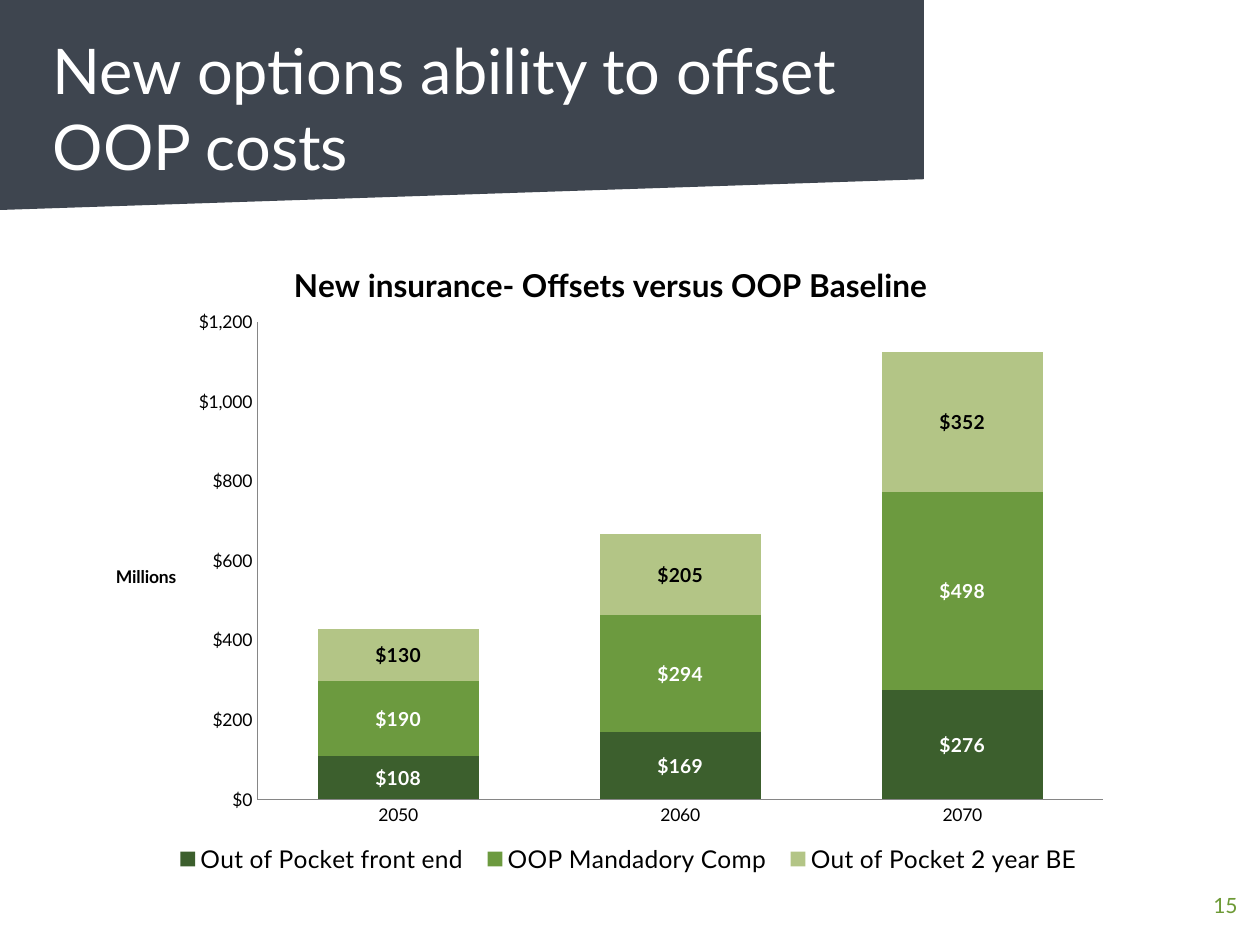
import dataclasses

import pptx
import pptx.chart.data
import pptx.dml.color
import pptx.enum.chart
import pptx.enum.shapes
import pptx.enum.text
import pptx.oxml
import pptx.oxml.ns
import pptx.util

Pt = pptx.util.Pt
qn = pptx.oxml.ns.qn


@dataclasses.dataclass(frozen=True)
class Theme:
    font: str = "Lato"
    banner: str = "3E454F"
    white: str = "FFFFFF"
    black: str = "000000"
    axis: str = "868686"
    accent: str = "6D9A35"
    title_size: int = 36
    chart_title_size: int = 18
    legend_size: int = 14
    number_size: int = 12
    label_size: int = 11
    axis_size: int = 10


THEME = Theme()
CATEGORIES = ["2050", "2060", "2070"]
SERIES = [
    ("Out of Pocket front end", (108, 169, 276), "3C5F2D", THEME.white),
    ("OOP Mandadory Comp", (190, 294, 498), "6C9A3F", THEME.white),
    ("Out of Pocket 2 year BE", (130, 205, 352), "B3C586", THEME.black),
]


def rgb(color):
    return pptx.dml.color.RGBColor.from_string(color)


def set_font(font, size, color=THEME.black, bold=False):
    font.name = THEME.font
    font.size = Pt(size)
    font.bold = bold
    font.color.rgb = rgb(color)


def write_text(text_frame, text, *, size, color=THEME.black, bold=False, align=None):
    for index, line in enumerate(text.split("\n")):
        paragraph = text_frame.paragraphs[0] if index == 0 else text_frame.add_paragraph()
        paragraph.alignment = align
        run = paragraph.add_run()
        run.text = line
        set_font(run.font, size, color, bold)


def add_block(slide, kind, left, top, width, height, color, rotation=0):
    shape = slide.shapes.add_shape(kind, Pt(left), Pt(top), Pt(width), Pt(height))
    shape.rotation = rotation
    shape.shadow.inherit = False
    shape.fill.solid()
    shape.fill.fore_color.rgb = rgb(color)
    shape.line.fill.background()


def add_title(slide, text):
    title = slide.shapes.title
    title.left, title.top, title.width, title.height = Pt(23), Pt(14.4), Pt(522.7), Pt(105.8)
    frame = title.text_frame
    frame.word_wrap = True
    frame.auto_size = pptx.enum.text.MSO_AUTO_SIZE.NONE
    frame.vertical_anchor = pptx.enum.text.MSO_ANCHOR.TOP
    write_text(frame, text, size=THEME.title_size, color=THEME.white,
               align=pptx.enum.text.PP_ALIGN.LEFT)
    slide.shapes._spTree.append(title._element)


def add_page_number(slide, text):
    box = slide.shapes.add_textbox(Pt(686.2), Pt(506.2), Pt(39.6), Pt(39.6))
    box.text_frame.word_wrap = True
    write_text(box.text_frame, text, size=THEME.number_size, color=THEME.accent)


def set_layout(element, index, inner=False, **fractions):
    for existing in element.findall(qn("c:layout")):
        element.remove(existing)
    values = [("layoutTarget", "inner")] if inner else []
    values += [(f"{name}Mode", "edge") for name in ("x", "y")]
    values += fractions.items()
    children = "".join(f'<c:{name} val="{value}"/>' for name, value in values)
    element.insert(index, pptx.oxml.parse_xml(
        f'<c:layout {pptx.oxml.ns.nsdecls("c")}>'
        f"<c:manualLayout>{children}</c:manualLayout></c:layout>"))


def format_axis(axis):
    axis.has_major_gridlines = False
    axis.major_tick_mark = pptx.enum.chart.XL_TICK_MARK.NONE
    axis.minor_tick_mark = pptx.enum.chart.XL_TICK_MARK.NONE
    axis.format.line.color.rgb = rgb(THEME.axis)
    axis.format.line.width = Pt(0.75)
    set_font(axis.tick_labels.font, THEME.axis_size)


def format_value_axis(axis):
    format_axis(axis)
    axis.minimum_scale, axis.maximum_scale, axis.major_unit = 0, 1200, 200
    axis.tick_labels.number_format = '"$"#,##0;[Red]"$"#,##0'
    axis.tick_labels.number_format_is_linked = False
    frame = axis.axis_title.text_frame
    write_text(frame, "Millions", size=THEME.axis_size, bold=True)
    body = frame._element.find(qn("a:bodyPr"))
    body.set("rot", "0")
    body.set("vert", "horz")
    set_layout(axis.axis_title._element, 1, x=0.02, y=0.51)


def format_series(series, color, label_color):
    series.format.fill.solid()
    series.format.fill.fore_color.rgb = rgb(color)
    labels = series.data_labels
    labels.show_value = True
    labels.number_format = '"$"#,##0'
    labels.number_format_is_linked = False
    labels.position = pptx.enum.chart.XL_LABEL_POSITION.CENTER
    set_font(labels.font, THEME.label_size, label_color, bold=True)


def add_cost_chart(slide):
    data = pptx.chart.data.CategoryChartData()
    data.categories = CATEGORIES
    for name, values, _, _ in SERIES:
        data.add_series(name, values)
    chart = slide.shapes.add_chart(
        pptx.enum.chart.XL_CHART_TYPE.COLUMN_STACKED,
        Pt(52.6), Pt(127.4), Pt(589.7), Pt(378.7), data).chart
    set_font(chart.font, THEME.axis_size)

    chart.has_title = True
    write_text(chart.chart_title.text_frame, "New insurance- Offsets versus OOP Baseline",
               size=THEME.chart_title_size, bold=True)
    set_layout(chart.chart_title._element, 1, x=0.19, y=0.05)

    chart.has_legend = True
    chart.legend.position = pptx.enum.chart.XL_LEGEND_POSITION.BOTTOM
    chart.legend.include_in_layout = False
    set_font(chart.legend.font, THEME.legend_size)
    set_layout(chart.legend._element, 1, x=0.07, y=0.93, w=0.9, h=0.06)

    format_axis(chart.category_axis)
    format_value_axis(chart.value_axis)
    plot = chart.plots[0]
    plot.gap_width, plot.overlap, plot.vary_by_categories = 75, 100, False
    for series, (_, _, color, label_color) in zip(plot.series, SERIES):
        format_series(series, color, label_color)
    plot_area = chart._chartSpace.chart.plotArea
    set_layout(plot_area, 0, inner=True, x=0.16, y=0.15, w=0.82, h=0.72)


def main():
    presentation = pptx.Presentation()
    presentation.slide_width, presentation.slide_height = Pt(720), Pt(540)
    slide = presentation.slides.add_slide(presentation.slide_layouts[5])
    shapes = pptx.enum.shapes.MSO_SHAPE
    add_block(slide, shapes.FLOWCHART_MANUAL_INPUT, 0, 0, 720, 120, THEME.banner, rotation=180)
    add_block(slide, shapes.RECTANGLE, 528, 0, 192, 108, THEME.white)
    add_page_number(slide, "15")
    add_cost_chart(slide)
    add_title(slide, "New options ability to offset\nOOP costs")
    presentation.save("out.pptx")


if __name__ == "__main__":
    main()
